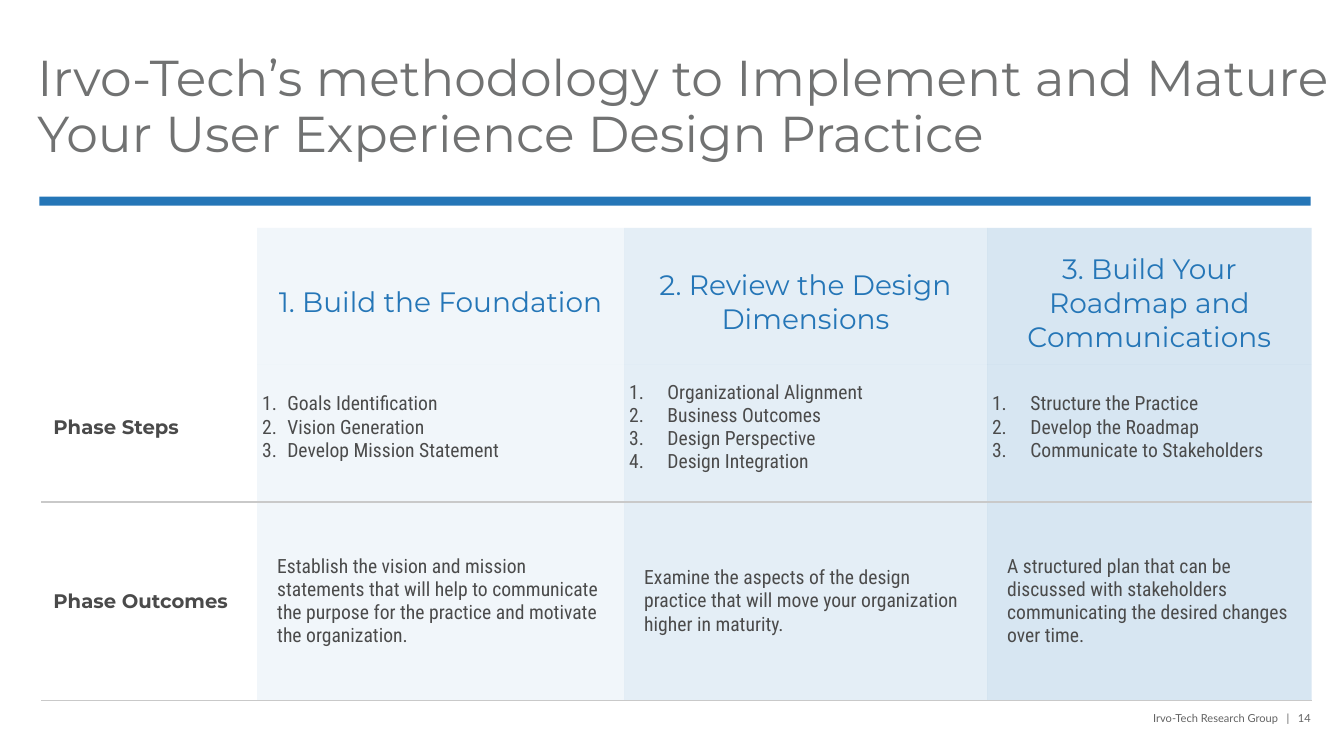
"""Build the methodology slide: a title, a rule, a table of three phases and a footer."""
from lxml.etree import SubElement
from pptx import Presentation
from pptx.dml.color import RGBColor
from pptx.enum.shapes import MSO_SHAPE
from pptx.enum.text import MSO_ANCHOR, PP_ALIGN
from pptx.oxml.ns import qn
from pptx.util import Inches, Pt

COLORS = {"title": "717272", "blue": "2576B7", "tint": "7CADD4", "label": "4A4A4A",
          "body": "4B4B4B", "line": "C9C9C9", "footer": "636363"}
HEADING, BODY, SMALL = "Montserrat", "Roboto Condensed", "Lato"
PHASES = [
    ("1. Build the Foundation",
     ["Goals Identification", "Vision Generation", "Develop Mission Statement"],
     "Establish the vision and mission statements that will help to communicate "
     "the purpose for the practice and motivate the organization."),
    ("2. Review the Design Dimensions",
     ["Organizational Alignment", "Business Outcomes", "Design Perspective", "Design Integration"],
     "Examine the aspects of the design practice that will move your organization "
     "higher in maturity."),
    ("3. Build Your Roadmap and Communications",
     ["Structure the Practice", "Develop the Roadmap", "Communicate to Stakeholders"],
     "A structured plan that can be discussed with stakeholders communicating "
     "the desired changes over time."),
]
COLUMNS = [2.14, 3.64, 3.6, 3.22]
ROWS = [1.36, 1.36, 1.97]
RIGHT = 13.0


def write(frame, lines, font, size, color, bold=False, align=PP_ALIGN.LEFT):
    """Fill a text frame with one paragraph per line and return the paragraphs."""
    frame.word_wrap = True
    for index, line in enumerate(lines):
        paragraph = frame.add_paragraph() if index else frame.paragraphs[0]
        paragraph.alignment = align
        run = paragraph.add_run()
        run.text = line
        run.font.name, run.font.size, run.font.bold = font, Pt(size), bold
        run.font.color.rgb = RGBColor.from_string(COLORS[color])
    return frame.paragraphs


def set_margins(target, left, top, right, bottom):
    """Set the four inner margins of a cell or text frame in inches."""
    target.margin_left, target.margin_top = Inches(left), Inches(top)
    target.margin_right, target.margin_bottom = Inches(right), Inches(bottom)


prs = Presentation()
prs.slide_width, prs.slide_height = Inches(13.33), Inches(7.5)
slide = prs.slides.add_slide(prs.slide_layouts[6])

title = slide.shapes.add_textbox(Inches(0.37), Inches(0.5), Inches(13.11), Inches(1.24)).text_frame
set_margins(title, 0, 0, 0, 0)
heading = "Irvo-Tech’s methodology to Implement and Mature Your User Experience Design Practice"
write(title, [heading], HEADING, 36, "title")[0].line_spacing = Pt(40)

rule = slide.shapes.add_shape(MSO_SHAPE.RECTANGLE, Inches(0.39), Inches(1.95),
                              Inches(RIGHT - 0.39), Inches(0.09))
rule.shadow.inherit = False
rule.fill.solid()
rule.fill.fore_color.rgb = RGBColor.from_string(COLORS["blue"])
rule.line.fill.background()

phases = slide.shapes.add_table(len(ROWS), len(COLUMNS), Inches(0.41), Inches(2.26),
                                Inches(sum(COLUMNS)), Inches(sum(ROWS))).table
phases.first_row = phases.horz_banding = False
no_style = "{2D5ABB26-0587-4C30-8999-92F81FD0307C}"
phases._tbl.tblPr.find(qn("a:tableStyleId")).text = no_style
for column, width in zip(phases.columns, COLUMNS):
    column.width = Inches(width)
for row, height in zip(phases.rows, ROWS):
    row.height = Inches(height)

for row, label in enumerate(["Phase Steps", "Phase Outcomes"], start=1):
    write(phases.cell(row, 0).text_frame, [label], HEADING, 14, "label", bold=True)
set_margins(phases.cell(1, 0), 0.12, 0.04, 0, 0.16)
set_margins(phases.cell(2, 0), 0.12, 0.12, 0.12, 0.12)

for number, (name, steps, outcome) in enumerate(PHASES, start=1):
    head, step_list, result = (phases.cell(row, number) for row in range(len(ROWS)))
    set_margins(head, 0.12, 0.24, 0.12, 0.12)
    set_margins(step_list, 0.05, 0.04, 0.12, 0.16)
    set_margins(result, 0.2, 0.2, 0.2, 0.2)
    write(head.text_frame, [name], HEADING, 20, "blue", align=PP_ALIGN.CENTER)
    write(result.text_frame, [outcome], BODY, 14, "body")
    indent = Inches(0.25 if number == 1 else 0.38)
    for step in write(step_list.text_frame, steps, BODY, 14, "body"):
        properties = step._p.get_or_add_pPr()
        properties.set("marL", str(indent))
        properties.set("indent", str(-indent))
        SubElement(properties, qn("a:buFont"), typeface="+mj-lt")
        SubElement(properties, qn("a:buAutoNum"), type="arabicPeriod")

for row in range(len(ROWS)):
    for column in range(len(COLUMNS)):
        cell = phases.cell(row, column)
        cell.vertical_anchor = MSO_ANCHOR.MIDDLE
        properties = cell._tc.get_or_add_tcPr()
        for edge in [[], ["a:lnB"], ["a:lnT", "a:lnB"]][row]:
            border = SubElement(properties, qn(edge), w=str(Pt(1)))
            SubElement(SubElement(border, qn("a:solidFill")), qn("a:srgbClr"), val=COLORS["line"])
        if column == 0:
            cell.fill.background()
            continue
        cell.fill.solid()
        cell.fill.fore_color.rgb = RGBColor.from_string(COLORS["tint"])
        tint = properties.find(qn("a:solidFill")).find(qn("a:srgbClr"))
        SubElement(tint, qn("a:alpha"), val=str(column * 10000))

footer = slide.shapes.add_textbox(Inches(RIGHT - 2.45), Inches(7.06), Inches(2.45), Inches(0.13)).text_frame
set_margins(footer, 0, 0, 0, 0)
credit = "Irvo-Tech Research Group   |   14"
write(footer, [credit], SMALL, 7.9, "footer", align=PP_ALIGN.RIGHT)[0].space_before = Pt(1.6)

prs.save("out.pptx")
